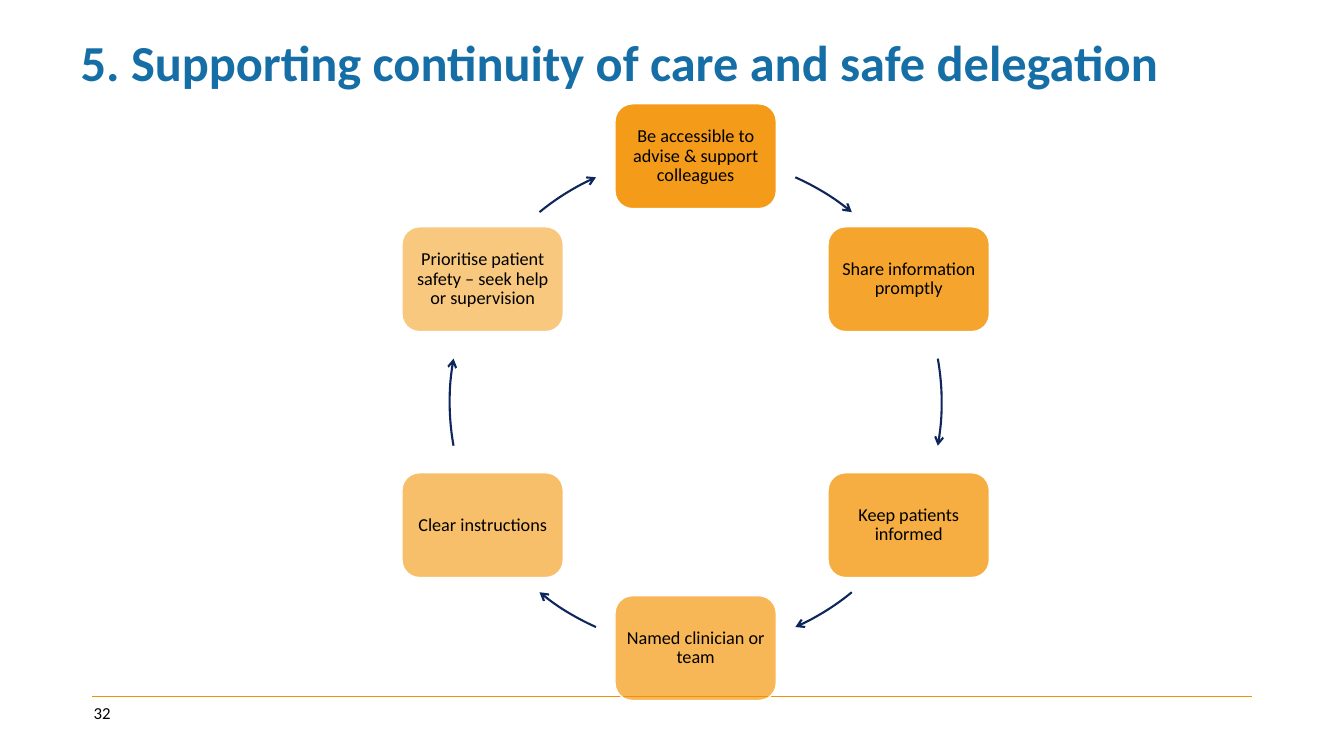
from math import cos, radians, sin

from lxml import etree
from pptx import Presentation
from pptx.dml.color import RGBColor
from pptx.enum.shapes import MSO_CONNECTOR, MSO_SHAPE as Shape
from pptx.enum.text import MSO_ANCHOR as Anchor, MSO_AUTO_SIZE as AutoSize, PP_ALIGN as Align
from pptx.oxml.ns import qn
from pptx.util import Inches, Pt

WIDTH, HEIGHT = 13.33, 7.5
FONT = "Calibri"
ORANGE, NAVY, BLUE, BLACK, WHITE = "F39200", "0F265C", "156EA5", "000000", "FFFFFF"
STEPS = [
    "Be accessible to advise & support colleagues",
    "Share information promptly",
    "Keep patients informed",
    "Named clinician or team",
    "Clear instructions",
    "Prioritise patient safety – seek help or supervision",
]
# Start and end of the arrows on one half of the ring, in degrees clockwise from the top
HALF_ARROWS = [(23.9, 39.4), (79.8, 100.2), (140.6, 156.1)]


def color(hex_text):
    return RGBColor.from_string(hex_text)


def inches(*lengths):
    return [Inches(length) for length in lengths]


def write(shape, text, size, hex_text, align=Align.LEFT, anchor=Anchor.MIDDLE, bold=False, spacing=1.0):
    frame = shape.text_frame
    frame.text = text
    frame.word_wrap = True
    frame.auto_size = AutoSize.NONE
    frame.vertical_anchor = anchor
    para = frame.paragraphs[0]
    para.alignment = align
    para.line_spacing = spacing
    font = para.runs[0].font
    font.name, font.size, font.bold = FONT, Pt(size), bold
    font.color.rgb = color(hex_text)
    return frame


def add_title(page, box, text):
    title = page.shapes.title
    title.left, title.top, title.width, title.height = inches(*box)
    write(title, text, 36, BLUE, anchor=Anchor.TOP, bold=True, spacing=0.9)


def add_footer(page, box, number):
    """Draw the rule along the top of the box and the page number below it."""
    left, top, width, height = box
    rule = page.shapes.add_connector(MSO_CONNECTOR.STRAIGHT, *inches(left, top, left + width, top))
    rule.line.color.rgb = color(ORANGE)
    rule.line.width = Pt(0.5)
    etree.SubElement(rule._element.spPr, qn("a:effectLst"))
    label = page.shapes.add_textbox(*inches(left - 0.08, top + 0.04, 0.49, height))
    write(label, number, 12, BLACK)


def add_step(page, box, text, opacity):
    card = page.shapes.add_shape(Shape.ROUNDED_RECTANGLE, *inches(*box))
    card.shadow.inherit = False
    card.fill.solid()
    card.fill.fore_color.rgb = color(ORANGE)
    solid = card._element.spPr.find(qn("a:solidFill"))
    etree.SubElement(solid[0], qn("a:alpha"), val=str(opacity * 1000))
    card.line.color.rgb = color(WHITE)
    card.line.width = Pt(1)
    frame = write(card, text, 13, BLACK, Align.CENTER, spacing=0.9)
    frame.margin_left = frame.margin_right = Inches(0.05)
    frame.margin_top = frame.margin_bottom = Inches(0.05)


def add_arc_arrow(page, box, start, end):
    arc = page.shapes.add_shape(Shape.ARC, *inches(*box))
    arc.shadow.inherit = False
    arc.fill.background()
    arc.line.color.rgb = color(NAVY)
    arc.line.width = Pt(1.5)
    for index, angle in enumerate((start, end)):
        # Arc angles run from three o'clock; one degree is 0.6 adjustment units
        arc.adjustments[index] = (angle - 90) % 360 * 0.6
    etree.SubElement(arc.line._get_or_add_ln(), qn("a:tailEnd"), type="arrow")


def add_cycle(page, box, steps):
    """Set the steps clockwise on the circle that fills the box, with arrows between."""
    left, top, size, _ = box
    radius = size / 2
    card_width, card_height = 1.6, 1.04
    for index, text in enumerate(steps):
        angle = radians(index * 360 / len(steps))
        card_left = left + radius + radius * sin(angle) - card_width / 2
        card_top = top + radius - radius * cos(angle) - card_height / 2
        add_step(page, (card_left, card_top, card_width, card_height), text, 90 - 8 * index)
    for turn in (0, 180):
        for start, end in HALF_ARROWS:
            add_arc_arrow(page, box, start + turn, end + turn)


def main():
    deck = Presentation()
    deck.slide_width, deck.slide_height = inches(WIDTH, HEIGHT)
    page = deck.slides.add_slide(deck.slide_layouts[5])
    add_footer(page, (0.91, 6.91, 11.51, 0.25), "32")
    add_title(page, (0.7, 0.33, 11.67, 0.51), "5. Supporting continuity of care and safe delegation")
    add_cycle(page, (4.46, 1.55, 4.88, 4.88), STEPS)
    deck.save("out.pptx")


if __name__ == "__main__":
    main()
